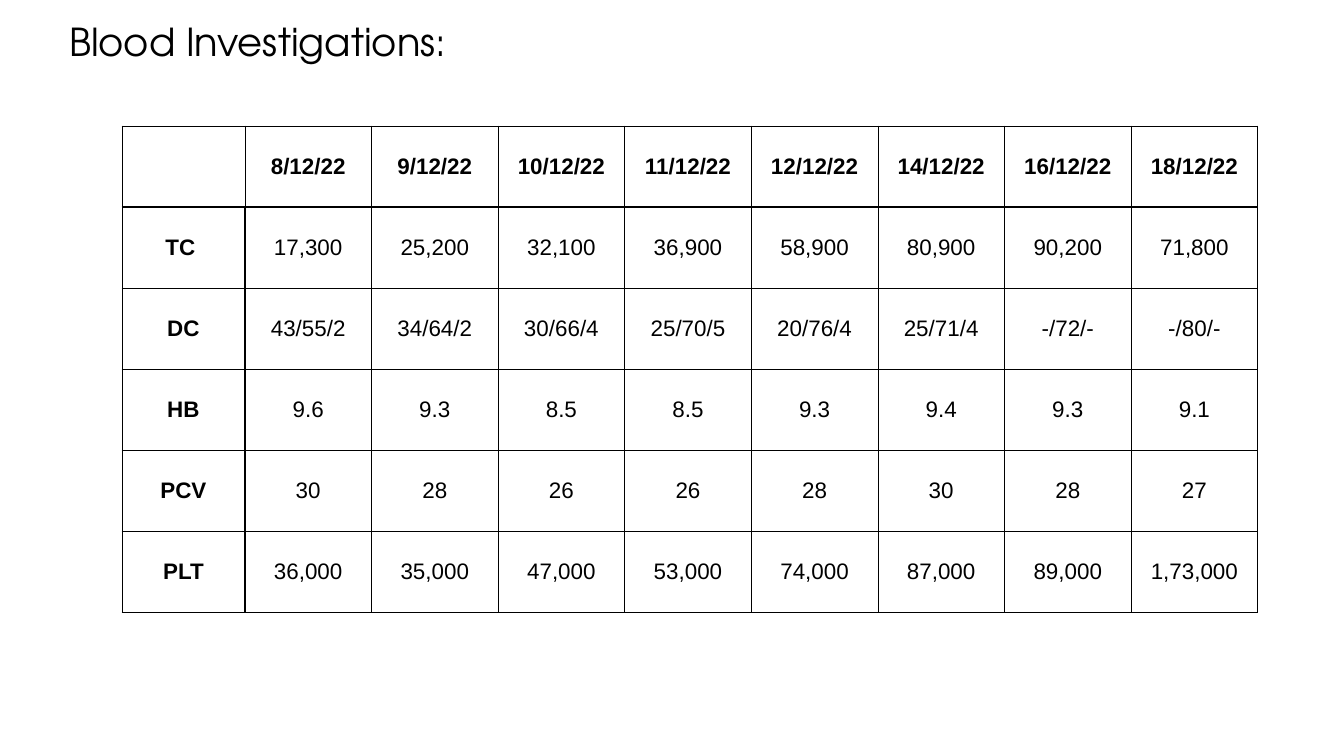
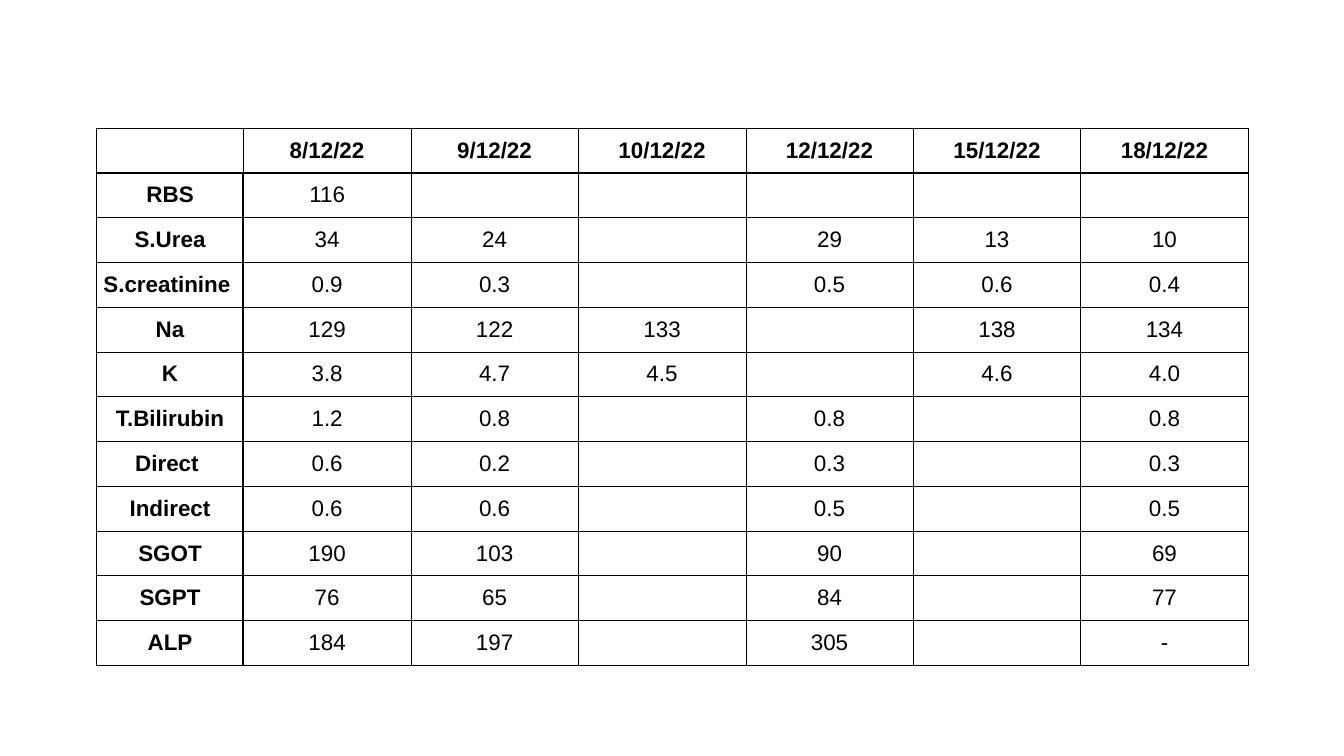
from lxml import etree
from pptx import Presentation
from pptx.dml.color import RGBColor
from pptx.enum.text import MSO_ANCHOR, PP_ALIGN
from pptx.oxml.ns import qn
from pptx.util import Inches, Pt

MIDDLE, TOP = MSO_ANCHOR.MIDDLE, MSO_ANCHOR.TOP
CENTER = PP_ALIGN.CENTER

# Content
TITLE = "Blood Investigations:"

BLOOD_COUNTS = [
    ["", "8/12/22", "9/12/22", "10/12/22", "11/12/22", "12/12/22", "14/12/22", "16/12/22", "18/12/22"],
    ["TC ", "17,300", "25,200", "32,100", "36,900", "58,900", "80,900", "90,200", "71,800"],
    ["DC", "43/55/2", "34/64/2", "30/66/4", "25/70/5", "20/76/4", "25/71/4", "-/72/-", "-/80/-"],
    ["HB", "9.6", "9.3", "8.5", "8.5", "9.3", "9.4", "9.3", "9.1"],
    ["PCV", "30", "28", "26", "26", "28", "30", "28", "27"],
    ["PLT", "36,000", "35,000", "47,000", "53,000", "74,000", "87,000", "89,000", "1,73,000"],
]

BIOCHEMISTRY = [
    ["", "8/12/22", "9/12/22", "10/12/22", "12/12/22", "15/12/22", "18/12/22"],
    ["RBS", "116", "", "", "", "", ""],
    ["S.Urea", "34", "24", "", "29", "13", "10"],
    ["S.creatinine ", "0.9", "0.3", "", "0.5", "0.6", "0.4"],
    ["Na", "129", "122", "133", "", "138", "134"],
    ["K", "3.8", "4.7", "4.5", "", "4.6", "4.0"],
    ["T.Bilirubin", "1.2", "0.8", "", "0.8", "", "0.8"],
    ["Direct ", "0.6", "0.2", "", "0.3", "", "0.3"],
    ["Indirect", "0.6", "0.6", "", "0.5", "", "0.5"],
    ["SGOT", "190", "103", "", "90", "", "69"],
    ["SGPT", "76", "65", "", "84", "", "77"],
    ["ALP", "184", "197", "", "305", "", "-"],
]

# Each slide: title, rows, table box (left, top, width, height), label column width
SLIDES = [
    (TITLE, BLOOD_COUNTS, (2.42, 2.5, 22.54, 9.65), 2.44),
    (None, BIOCHEMISTRY, (1.92, 2.54, 22.85, 10.66), 2.91),
]

# Shared style
BLACK = RGBColor(0x00, 0x00, 0x00)
SLIDE_SIZE = (26.67, 15)
TITLE_BOX = (1.32, 0.31, 24.03, 14.02)
TITLE_FONT = {"name": "TeX Gyre Adventor", "size": Pt(55)}
CELL_FONT = {"name": "Arial", "size": Pt(32)}
THIN, THICK = Pt(1), Pt(3)
MARGINS = ("margin_left", "margin_top", "margin_right", "margin_bottom")


def set_margins(target, inches):
    for margin in MARGINS:
        setattr(target, margin, Inches(inches))


def write(paragraph, text, font_format, bold=False):
    run = paragraph.add_run()
    run.text = text
    for name, value in font_format.items():
        setattr(run.font, name, value)
    run.font.bold = bold
    run.font.color.rgb = BLACK


def add_title(slide, text):
    frame = slide.shapes.add_textbox(*map(Inches, TITLE_BOX)).text_frame
    frame.word_wrap = True
    frame.vertical_anchor = TOP
    set_margins(frame, 0.05)
    write(frame.paragraphs[0], text, TITLE_FONT)


def set_borders(cell, widths):
    """Draw the borders; they come before the fill in the cell properties."""
    properties = cell._tc.get_or_add_tcPr()
    for position, (side, width) in enumerate(widths.items()):
        line = etree.Element(qn(f"a:ln{side}"), w=str(int(width)))
        fill = etree.SubElement(line, qn("a:solidFill"))
        etree.SubElement(fill, qn("a:srgbClr"), val=str(BLACK))
        properties.insert(position, line)


def add_results_table(slide, rows, box, label_width):
    column_count = len(rows[0])
    _, _, width, height = box
    table = slide.shapes.add_table(len(rows), column_count, *map(Inches, box)).table
    table.first_row = table.horz_banding = False

    # Dates share the width left by the labels
    date_width = (width - label_width) / (column_count - 1)
    for index, column in enumerate(table.columns):
        column.width = Inches(date_width if index else label_width)
    for row in table.rows:
        row.height = Inches(height / len(rows))

    for row_index, values in enumerate(rows):
        for column_index, value in enumerate(values):
            cell = table.cell(row_index, column_index)
            is_header = row_index == 0
            is_label = column_index == 0 and not is_header
            cell.fill.background()
            set_borders(cell, {
                "L": THIN,
                "R": THICK if is_label else THIN,
                "T": THIN,
                "B": THICK if is_header else THIN,
            })
            if value:
                cell.vertical_anchor = MIDDLE
                set_margins(cell, 0.06)
                paragraph = cell.text_frame.paragraphs[0]
                paragraph.alignment = CENTER
                write(paragraph, value, CELL_FONT, bold=is_header or is_label)


def main():
    presentation = Presentation()
    presentation.slide_width, presentation.slide_height = map(Inches, SLIDE_SIZE)
    blank_layout = presentation.slide_layouts[6]
    for title, rows, box, label_width in SLIDES:
        slide = presentation.slides.add_slide(blank_layout)
        if title:
            add_title(slide, title)
        add_results_table(slide, rows, box, label_width)
    presentation.save("out.pptx")


if __name__ == "__main__":
    main()
